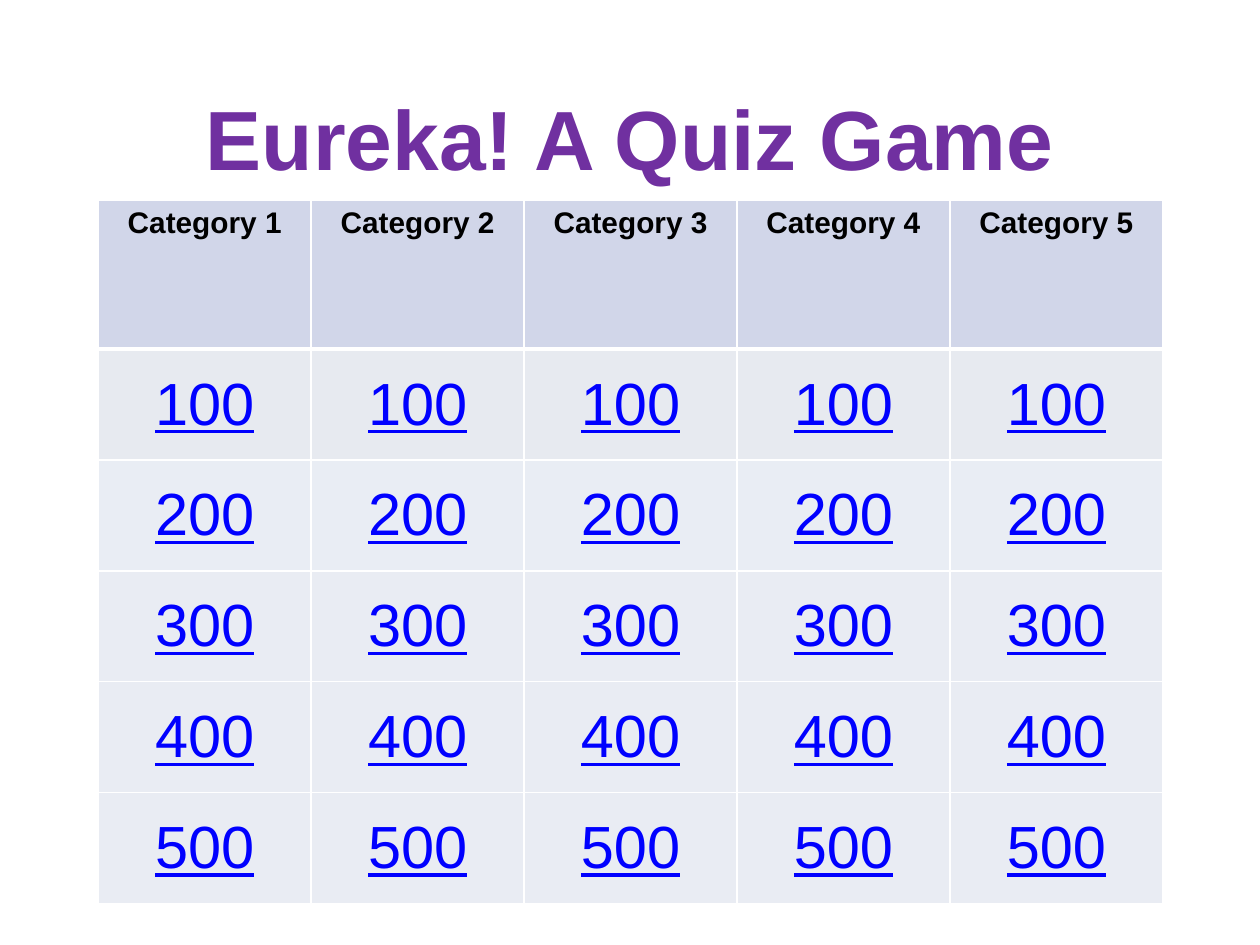
from dataclasses import dataclass

import lxml.etree
import pptx
import pptx.dml.color
import pptx.enum.text
import pptx.oxml.ns
import pptx.util

Inches = pptx.util.Inches
Pt = pptx.util.Pt


@dataclass(frozen=True)
class Theme:
    font: str = "Arial"
    title_color: str = "7030A0"
    header_color: str = "000000"
    points_color: str = "0000FF"
    border_color: str = "FFFFFF"
    header_fill: str = "D1D6E9"
    points_fills: tuple = ("E7EAF0", "E9EDF4", "E9ECF3", "E9ECF3", "E9ECF3")
    title_size: int = 48
    header_size: int = 17
    points_size: int = 34
    thin_border: int = 1
    thick_border: int = 3


THEME = Theme()
CATEGORY_COUNT = 5
POINTS = (100, 200, 300, 400, 500)
COLUMN_WIDTH = 1.69
HEADER_HEIGHT = 1.18
POINTS_HEIGHT = 0.88


def rgb(value):
    return pptx.dml.color.RGBColor.from_string(value)


def write_text(text_frame, text, size, color, bold=False, underline=False):
    text_frame.text = text
    paragraph = text_frame.paragraphs[0]
    paragraph.alignment = pptx.enum.text.PP_ALIGN.CENTER
    font = paragraph.font
    font.name = THEME.font
    font.size = Pt(size)
    font.bold = bold
    font.color.rgb = rgb(color)
    if underline:
        paragraph.runs[0].font.underline = True


def add_title(slide, text):
    title = slide.shapes.title
    title.left, title.top = Inches(0.5), Inches(0.46)
    title.width, title.height = Inches(9), Inches(1.25)
    title.text_frame.vertical_anchor = pptx.enum.text.MSO_ANCHOR.MIDDLE
    write_text(title.text_frame, text, THEME.title_size, THEME.title_color, bold=True)


def set_borders(cell, top, bottom):
    qn = pptx.oxml.ns.qn
    properties = cell._tc.get_or_add_tcPr()
    widths = {"lnL": THEME.thin_border, "lnR": THEME.thin_border, "lnT": top, "lnB": bottom}
    for side, width in widths.items():
        line = lxml.etree.SubElement(properties, qn(f"a:{side}"), w=str(Pt(width)))
        fill = lxml.etree.SubElement(line, qn("a:solidFill"))
        lxml.etree.SubElement(fill, qn("a:srgbClr"), val=THEME.border_color)


def format_cell(cell, fill, anchor, top, bottom):
    cell.margin_left = cell.margin_right = Inches(0.09)
    cell.margin_top = cell.margin_bottom = Inches(0.05)
    cell.vertical_anchor = anchor
    set_borders(cell, top, bottom)
    cell.fill.solid()
    cell.fill.fore_color.rgb = rgb(fill)


def fill_header(table):
    for number, cell in enumerate(table.rows[0].cells, start=1):
        format_cell(cell, THEME.header_fill, pptx.enum.text.MSO_ANCHOR.TOP,
                    THEME.thin_border, THEME.thick_border)
        write_text(cell.text_frame, f"Category {number}", THEME.header_size,
                   THEME.header_color, bold=True)


def fill_points(table):
    for index, (points, fill) in enumerate(zip(POINTS, THEME.points_fills)):
        top = THEME.thin_border if index else THEME.thick_border
        for cell in table.rows[index + 1].cells:
            format_cell(cell, fill, pptx.enum.text.MSO_ANCHOR.MIDDLE,
                        top, THEME.thin_border)
            write_text(cell.text_frame, str(points), THEME.points_size,
                       THEME.points_color, underline=True)


def add_board(slide):
    heights = [HEADER_HEIGHT] + [POINTS_HEIGHT] * len(POINTS)
    table = slide.shapes.add_table(
        len(heights), CATEGORY_COUNT, Inches(0.78), Inches(1.59),
        Inches(COLUMN_WIDTH * CATEGORY_COUNT), Inches(sum(heights))).table
    for column in table.columns:
        column.width = Inches(COLUMN_WIDTH)
    for row, height in zip(table.rows, heights):
        row.height = Inches(height)
    fill_header(table)
    fill_points(table)


def main():
    presentation = pptx.Presentation()
    presentation.slide_width = Inches(10)
    presentation.slide_height = Inches(7.5)
    slide = presentation.slides.add_slide(presentation.slide_layouts[5])
    add_title(slide, "Eureka! A Quiz Game")
    add_board(slide)
    presentation.save("out.pptx")


if __name__ == "__main__":
    main()
